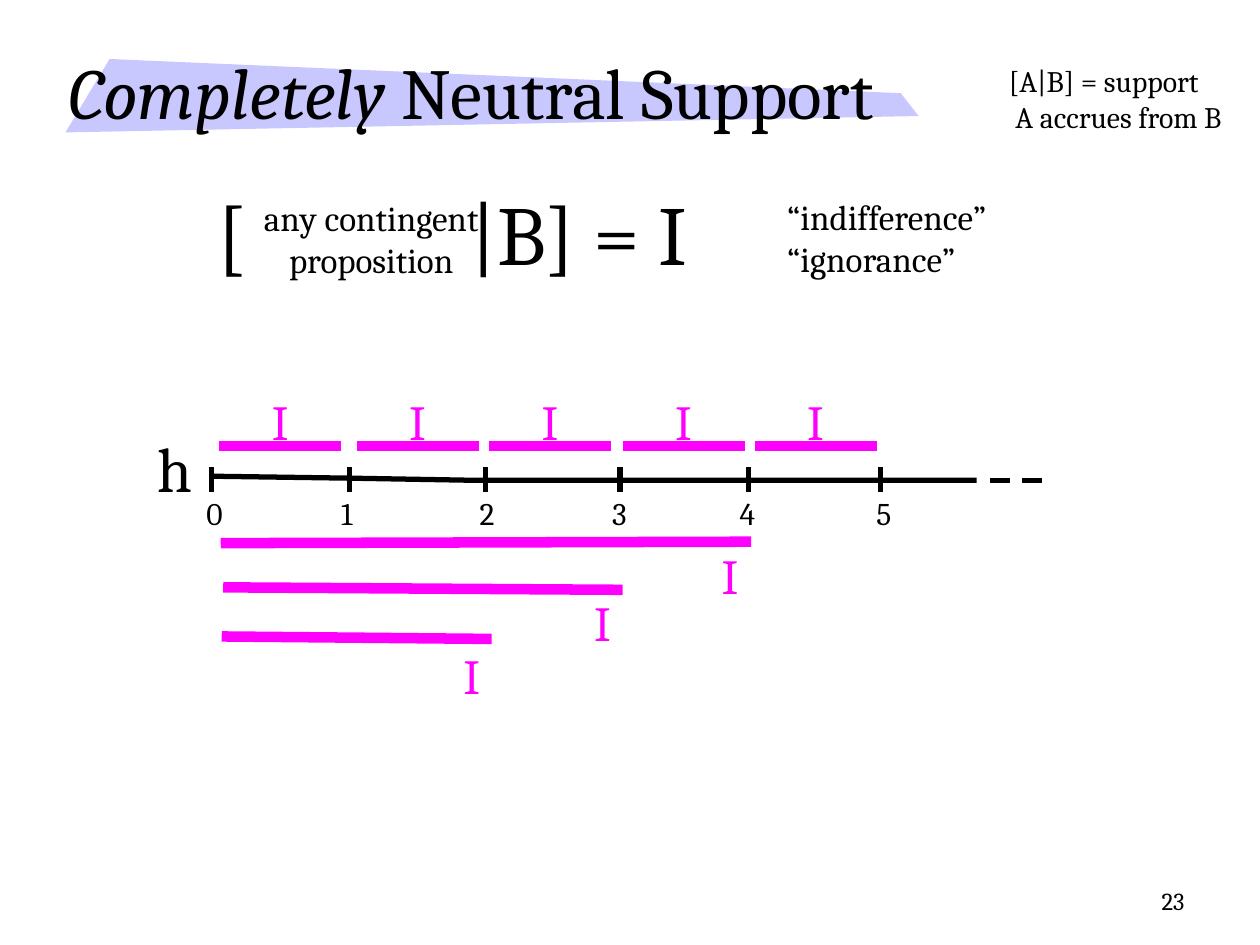
from lxml.etree import SubElement
from pptx import Presentation
from pptx.dml.color import RGBColor
from pptx.enum.shapes import MSO_CONNECTOR
from pptx.enum.text import MSO_ANCHOR, MSO_AUTO_SIZE, PP_ALIGN
from pptx.oxml.ns import qn
from pptx.util import Cm, Pt

BLACK = RGBColor(0x00, 0x00, 0x00)
MAGENTA = RGBColor(0xFF, 0x00, 0xFF)
LAVENDER = RGBColor(0xC8, 0xC8, 0xFF)


class SlideWriter:
    """Holds the text style and the slide being built; lengths are in cm."""

    font_name = "Cambria"

    def __init__(self, slide):
        self.slide = slide

    def text(self, left, top, width, height, lines, size, color=BLACK,
             align=PP_ALIGN.LEFT, wrap=True, **frame_format):
        """Add a text box; each line is a list of (text, run format) pairs or a string."""
        box = self.slide.shapes.add_textbox(Cm(left), Cm(top), Cm(width), Cm(height))
        frame = box.text_frame
        settings = {"word_wrap": wrap, "auto_size": MSO_AUTO_SIZE.SHAPE_TO_FIT_TEXT}
        for name, value in (settings | frame_format).items():
            setattr(frame, name, value)
        for index, line in enumerate(lines):
            paragraph = frame.add_paragraph() if index else frame.paragraphs[0]
            paragraph.alignment = align
            for words, run_format in [(line, {})] if isinstance(line, str) else line:
                run = paragraph.add_run()
                run.text = words
                run.font.color.rgb = color
                font_format = {"name": self.font_name, "size": Pt(size)}
                for name, value in (font_format | run_format).items():
                    setattr(run.font, name, value)
        return frame

    def line(self, x1, y1, x2, y2, color=BLACK, width=3):
        connector = self.slide.shapes.add_connector(
            MSO_CONNECTOR.STRAIGHT, Cm(x1), Cm(y1), Cm(x2), Cm(y2))
        connector.line.color.rgb = color
        connector.line.width = Pt(width)
        SubElement(connector._element.spPr, qn("a:effectLst"))

    def outline(self, points, fill=None, line=None, width=3):
        """Add a closed filled shape, or an open stroke when there is no fill."""
        start, *rest = [(Cm(x), Cm(y)) for x, y in points]
        builder = self.slide.shapes.build_freeform(*start)
        builder.add_line_segments(rest, close=fill is not None)
        shape = builder.convert_to_shape()
        shape.shadow.inherit = False
        if fill is None:
            shape.fill.background()
            shape.line.color.rgb = line
            shape.line.width = Pt(width)
        else:
            shape.fill.solid()
            shape.fill.fore_color.rgb = fill
            shape.line.fill.background()

    def indifference(self, left, top):
        self.text(left, top, 0.84, 1.45, ["I"], 28, MAGENTA, wrap=False)


def add_tab_stop(paragraph, position):
    tabs = SubElement(paragraph._p.get_or_add_pPr(), qn("a:tabLst"))
    SubElement(tabs, qn("a:tab"), pos=str(Cm(position)), algn="l")


def add_heading(writer):
    fixed = {"auto_size": MSO_AUTO_SIZE.NONE, "vertical_anchor": MSO_ANCHOR.MIDDLE}
    writer.text(18.21, 17.65, 5.92, 1.02, ["23"], 14, align=PP_ALIGN.RIGHT, **fixed)
    writer.outline([(2.21, 1.19), (18.16, 1.88), (18.52, 2.34), (1.32, 2.67)],
                   fill=LAVENDER)
    title = [("Completely", {"italic": True}), (" Neutral Support", {})]
    writer.text(1.14, 0.99, 18.39, 1.7, [title], 41, **fixed)
    writer.text(20.09, 1.14, 5.03, 1.7, ["[A|B] = support", " A accrues from B"], 17)


def add_equation(writer):
    writer.text(15.62, 3.81, 5.46, 1.96, ["“indifference”", "“ignorance”"], 20)
    equation = writer.text(4.14, 3.53, 10.54, 2.29, ["[\t|B] = I"], 48)
    add_tab_stop(equation.paragraphs[0], 5.1)
    writer.text(4.88, 3.84, 5.21, 1.96, ["any contingent proposition"], 20,
                align=PP_ALIGN.CENTER)


def add_number_line(writer):
    axis_y = 9.68
    writer.outline([(4.22, 9.6), (7.04, 9.64), (9.37, axis_y), (19.69, axis_y)],
                   line=BLACK)
    for dash_left in (19.96, 20.6):
        writer.line(dash_left, axis_y, dash_left + 0.41, axis_y)
    writer.text(2.92, 8.53, 1.14, 1.78, ["h"], 36, wrap=False)

    ticks = [(4.27, 3.91), (7.04, 6.63), (9.78, 9.42),
             (12.5, 12.09), (15.09, 14.66), (17.75, 17.42)]
    for number, (tick, label_left) in enumerate(ticks):
        writer.line(tick, 9.42, tick, 9.91)
        writer.text(label_left, 9.84, 0.84, 1.02, [str(number)], 18, wrap=False)


def add_intervals(writer):
    for start in (4.42, 7.19, 9.86, 12.55, 15.21):
        writer.line(start, 8.99, start + 2.46, 8.99, MAGENTA, 6)
        writer.indifference(start + 0.81, 7.77)

    nested = [((4.45, 10.95, 15.14, 10.92), (14.3, 10.87)),
              ((4.5, 11.84, 12.55, 11.89), (11.73, 11.81)),
              ((4.47, 12.83, 9.91, 12.88), (9.09, 12.88))]
    for ends, label in nested:
        writer.line(*ends, MAGENTA, 6)
        writer.indifference(*label)


def main():
    deck = Presentation()
    deck.slide_width, deck.slide_height = Cm(25.4), Cm(19.05)
    writer = SlideWriter(deck.slides.add_slide(deck.slide_layouts[6]))
    add_heading(writer)
    add_equation(writer)
    add_number_line(writer)
    add_intervals(writer)
    deck.save("out.pptx")


if __name__ == "__main__":
    main()
